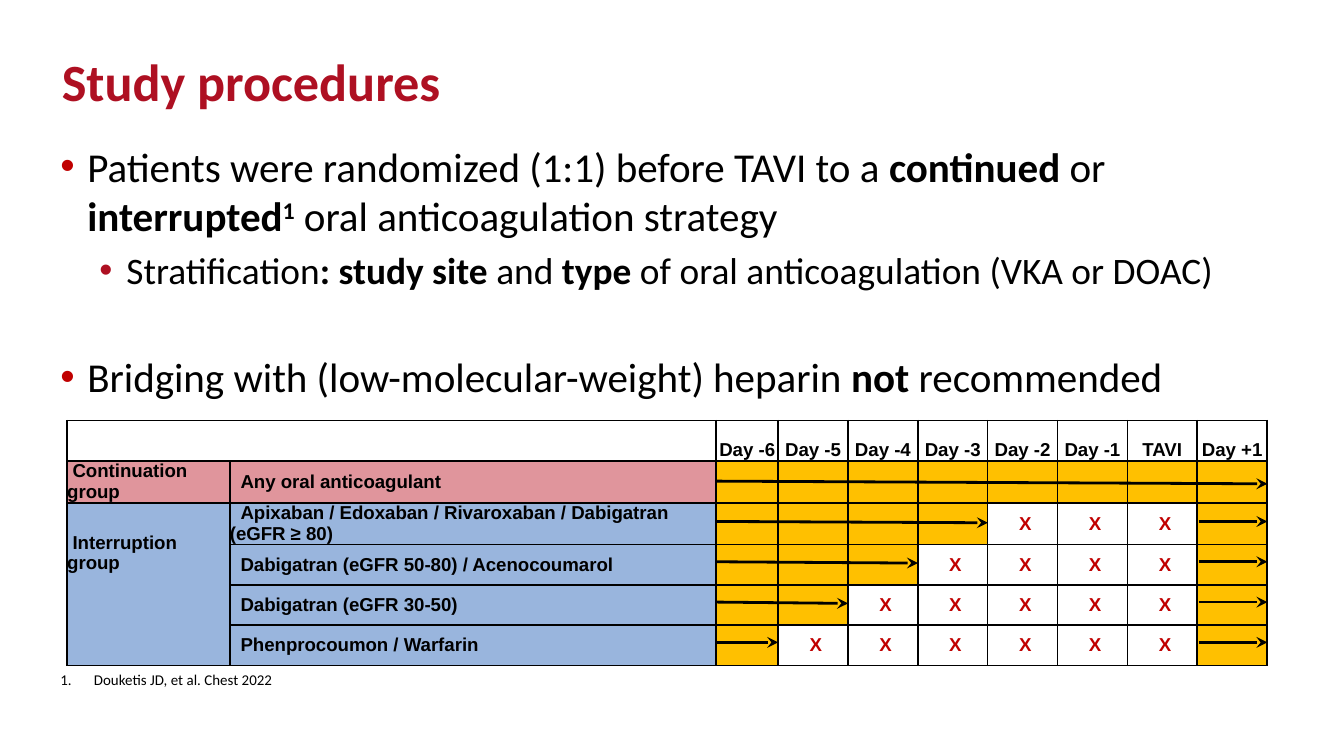
from lxml.etree import SubElement
from pptx import Presentation
from pptx.dml.color import RGBColor
from pptx.enum.shapes import MSO_CONNECTOR as Connector
from pptx.enum.text import MSO_ANCHOR as Anchor, MSO_AUTO_SIZE as AutoSize, PP_ALIGN as Align
from pptx.oxml.ns import qn
from pptx.util import Inches, Pt

BLACK, WHITE, CRIMSON, RED = "000000", "FFFFFF", "AE1022", "C00000"
PINK, BLUE, AMBER = "E0959C", "99B5DD", "FFC000"

DAYS = ["Day -6", "Day -5", "Day -4", "Day -3", "Day -2", "Day -1", "TAVI", "Day +1"]
# Regimen and number of days on treatment before the interruption
REGIMENS = [
    ("Any oral anticoagulant", 8),
    ("Apixaban / Edoxaban / Rivaroxaban / Dabigatran (eGFR ≥ 80)", 4),
    ("Dabigatran (eGFR 50-80) / Acenocoumarol", 3),
    ("Dabigatran (eGFR 30-50)", 2),
    ("Phenprocoumon / Warfarin", 1),
]
TABLE_LEFT, TABLE_TOP, ROW_HEIGHT = 0.5, 3.13, 0.3
GROUP_WIDTH, REGIMEN_WIDTH = 1.21, 3.62
FIRST_DAY_WIDTH, DAY_WIDTH = 0.46, 0.52
FIRST_DAY_LEFT = TABLE_LEFT + GROUP_WIDTH + REGIMEN_WIDTH


def color(value):
    return RGBColor.from_string(value)


def day_end(days):
    return FIRST_DAY_LEFT + FIRST_DAY_WIDTH + DAY_WIDTH * (days - 1)


class SlideBuilder:
    text_font, table_font = "Calibri", "Arial"

    def __init__(self, slide):
        self.slide = slide

    def place(self, shape, left, top, width, height):
        shape.left, shape.top = Inches(left), Inches(top)
        shape.width, shape.height = Inches(width), Inches(height)
        frame = shape.text_frame
        frame.word_wrap, frame.auto_size = True, AutoSize.NONE
        frame.vertical_anchor = Anchor.TOP
        return frame

    def run(self, paragraph, text, size, ink=BLACK, bold=False, font=None, raised=False):
        run = paragraph.add_run()
        run.text = text
        run.font.name = font or self.text_font
        run.font.size, run.font.bold = Pt(size), bold
        run.font.color.rgb = color(ink)
        if raised:
            run._r.get_or_add_rPr().set("baseline", "30000")

    def bullet(self, paragraph, ink, margin, hanging, numbered=False):
        props = paragraph._p.get_or_add_pPr()
        props.set("marL", str(Inches(margin)))
        props.set("indent", str(-Inches(hanging)))
        SubElement(SubElement(props, qn("a:buClr")), qn("a:srgbClr"), val=ink)
        if numbered:
            SubElement(props, qn("a:buFont"), typeface=self.text_font)
            SubElement(props, qn("a:buAutoNum"), type="arabicPeriod")
        else:
            SubElement(props, qn("a:buFont"), typeface="Arial")
            SubElement(props, qn("a:buChar"), char="•")

    def title(self, text):
        heading = self.place(self.slide.shapes.title, 0.36, 0.37, 8.35, 0.47).paragraphs[0]
        heading.alignment, heading.line_spacing = Align.LEFT, 0.89
        self.run(heading, text, 28, CRIMSON, True)

    def body(self, points):
        frame = self.place(self.slide.placeholders[1], 0.35, 1, 9.06, 2.76)
        for index, (level, before, size, ink, parts) in enumerate(points):
            point = frame.paragraphs[0] if index == 0 else frame.add_paragraph()
            point.level = level
            self.bullet(point, ink, 0.49 if level else 0.2, 0.2)
            point.space_before = Pt(before)
            for text, bold, raised in parts:
                self.run(point, text, size, bold=bold, raised=raised)

    def cell(self, cell, text="", fill=WHITE, ink=BLACK, align=Align.LEFT,
             anchor=Anchor.MIDDLE, indent=0.0, top=0.0):
        cell.margin_left = cell.margin_right = cell.margin_bottom = 0
        cell.margin_top, cell.vertical_anchor = Inches(top), anchor
        props = cell._tc.get_or_add_tcPr()
        for side in ("a:lnL", "a:lnR", "a:lnT", "a:lnB"):
            border = SubElement(props, qn(side), w=str(Pt(1)))
            SubElement(SubElement(border, qn("a:solidFill")), qn("a:srgbClr"), val=BLACK)
        cell.fill.solid()
        cell.fill.fore_color.rgb = color(fill)
        paragraph = cell.text_frame.paragraphs[0]
        paragraph.alignment = align
        paragraph._p.get_or_add_pPr().set("indent", str(Inches(indent)))
        if text:
            self.run(paragraph, text, 10, ink, True, self.table_font)
        else:
            SubElement(paragraph._p, qn("a:endParaRPr"), sz="1000")

    def schedule(self):
        widths = [GROUP_WIDTH, REGIMEN_WIDTH, FIRST_DAY_WIDTH] + [DAY_WIDTH] * 7
        rows = len(REGIMENS) + 1
        table = self.slide.shapes.add_table(
            rows, len(widths), Inches(TABLE_LEFT), Inches(TABLE_TOP),
            Inches(sum(widths)), Inches(ROW_HEIGHT * rows)).table
        table.first_row = table.horz_banding = False
        for column, width in zip(table.columns, widths):
            column.width = Inches(width)
        for row in table.rows:
            row.height = Inches(ROW_HEIGHT)

        # Header
        for column in (0, 1):
            self.cell(table.cell(0, column))
        for column, day in enumerate(DAYS, 2):
            self.cell(table.cell(0, column), day, align=Align.CENTER, anchor=Anchor.BOTTOM)

        # Groups, regimens and days
        groups = {1: "Continuation group", 2: "Interruption group"}
        for row, (regimen, days) in enumerate(REGIMENS, 1):
            tint = PINK if row == 1 else BLUE
            spans_rows = row == 2
            self.cell(table.cell(row, 0), groups.get(row, ""), tint, indent=0.04,
                      anchor=Anchor.TOP if spans_rows else Anchor.MIDDLE,
                      top=0.22 if spans_rows else 0)
            self.cell(table.cell(row, 1), regimen, tint, indent=0.08)
            for day in range(1, len(DAYS) + 1):
                treated = day <= days or day == len(DAYS)
                self.cell(table.cell(row, day + 1), "" if treated else "X",
                          AMBER if treated else WHITE, RED, Align.CENTER, indent=0.04)
        table.cell(0, 0).merge(table.cell(0, 1))
        table.cell(2, 0).merge(table.cell(rows - 1, 0))

    def arrow(self, x1, y1, x2, y2):
        arrow = self.slide.shapes.add_connector(
            Connector.STRAIGHT, Inches(x1), Inches(y1), Inches(x2), Inches(y2))
        arrow.line.color.rgb, arrow.line.width = color(BLACK), Pt(1.5)
        SubElement(arrow.line._get_or_add_ln(), qn("a:tailEnd"), type="stealth")
        SubElement(arrow._element.spPr, qn("a:effectLst"))

    def footnote(self, text):
        box = self.slide.shapes.add_textbox(0, 0, 0, 0)
        note = self.place(box, 0.35, 4.94, 2.91, 0.24).paragraphs[0]
        self.bullet(note, BLACK, 0.25, 0.25, numbered=True)
        self.run(note, text, 8)


def main():
    deck = Presentation()
    deck.slide_width, deck.slide_height = Inches(10), Inches(10 * 9 / 16)
    builder = SlideBuilder(deck.slides.add_slide(deck.slide_layouts[1]))

    # Title and key points: level, space before, size, bullet colour, (text, bold, raised)
    builder.title("Study procedures")
    builder.body([
        (0, 0, 22, RED, [
            ("Patients were randomized (1:1) before TAVI to a ", False, False),
            ("continued", True, False), (" or ", False, False),
            ("interrupted", True, False), ("1", True, True),
            (" oral anticoagulation strategy", False, False)]),
        (1, 4, 20, CRIMSON, [
            ("Stratification", False, False), (": study site ", True, False),
            ("and ", False, False), ("type", True, False),
            (" of oral anticoagulation (VKA or DOAC)", False, False)]),
        (0, 32, 22, RED, [
            ("Bridging with (low-molecular-weight) heparin ", False, False),
            ("not", True, False), (" recommended", False, False)]),
    ])

    # Treatment schedule
    builder.schedule()

    # Treatment periods before and after the procedure
    for row, (_, days) in enumerate(REGIMENS):
        y = 3.58 + ROW_HEIGHT * row
        slope = 0.02 if days == len(DAYS) else 0.01 if days > 1 else 0
        builder.arrow(FIRST_DAY_LEFT, y, day_end(days), y + slope)
        if days < len(DAYS):
            builder.arrow(8.92, y, day_end(len(DAYS)), y)

    builder.footnote("Douketis JD, et al. Chest 2022")
    deck.save("out.pptx")


if __name__ == "__main__":
    main()
